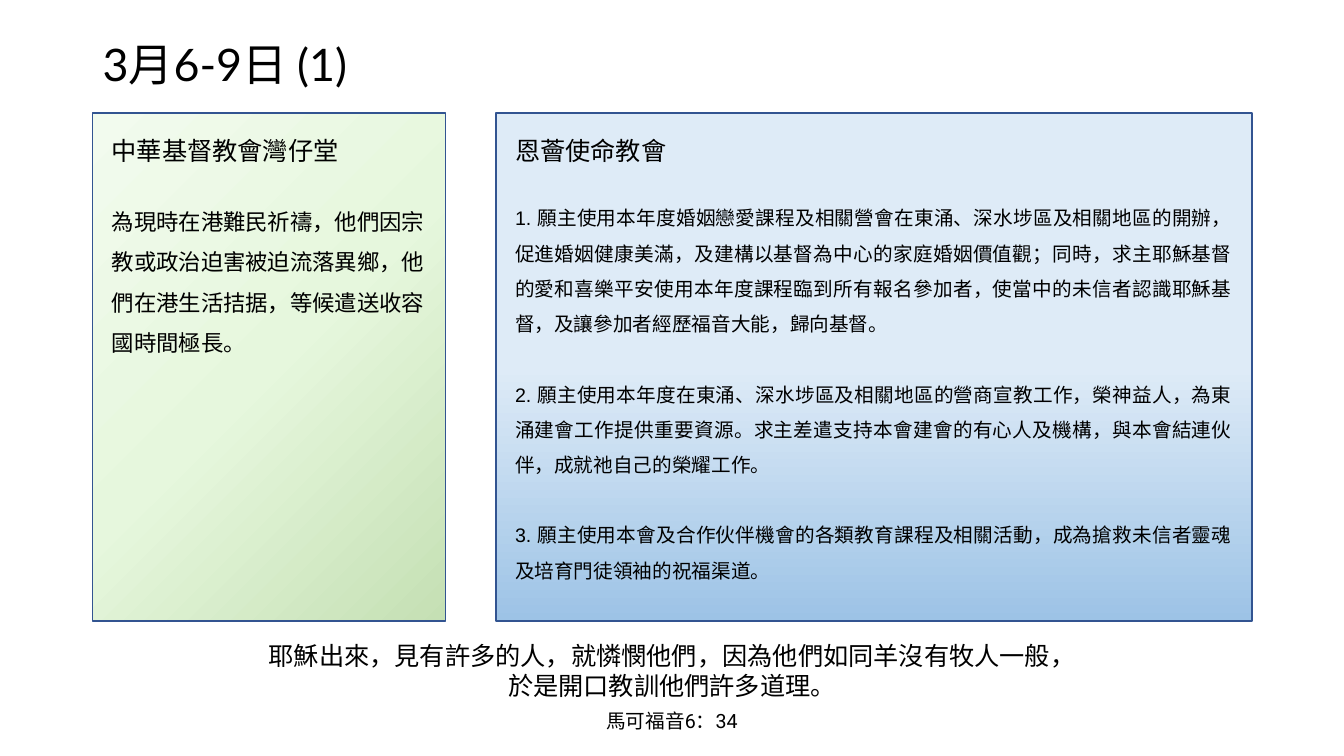
from lxml import etree
from pptx import Presentation
from pptx import util as u
from pptx.dml.color import RGBColor
from pptx.enum import shapes, text
from pptx.oxml.ns import qn

COLORS = {
    "ink": "000000",
    "edge": "325491",
    "green": ["C5E0B4", "E6F7DD", "F2FBEE"],
    "blue": ["9DC3E6", "DEEBF7", "DCEBF8"],
}
LEFT = text.PP_ALIGN.LEFT
CENTER = text.PP_ALIGN.CENTER
JUST = text.PP_ALIGN.JUSTIFY


class Page:
    def __init__(self, slide):
        self.slide = slide

    def panel(self, box, tint, angle):
        rect = self.slide.shapes.add_shape(
            shapes.MSO_SHAPE.RECTANGLE, *map(u.Inches, box))
        rect.shadow.inherit = False
        rect.line.color.rgb = RGBColor.from_string(COLORS["edge"])
        rect.line.width = u.Pt(1)
        rect.fill.gradient()
        grad = rect.fill._xPr.find(qn("a:gradFill"))
        for child in list(grad):
            grad.remove(child)
        stops = etree.SubElement(grad, qn("a:gsLst"))
        for i, shade in enumerate(COLORS[tint]):
            stop = etree.SubElement(stops, qn("a:gs"), pos=str(i * 50000))
            etree.SubElement(stop, qn("a:srgbClr"), val=shade)
        etree.SubElement(grad, qn("a:lin"), ang=str(angle * 60000), scaled="0")

    def words(self, box, font, paras, anchor=text.MSO_ANCHOR.TOP, grow=True):
        frame = self.slide.shapes.add_textbox(*map(u.Inches, box)).text_frame
        frame.word_wrap = True
        frame.vertical_anchor = anchor
        if grow:
            frame.auto_size = text.MSO_AUTO_SIZE.SHAPE_TO_FIT_TEXT
        for i, (line, size, align, pitch, gap) in enumerate(paras):
            para = frame.add_paragraph() if i else frame.paragraphs[0]
            para.text = line
            para.alignment = align
            para.line_spacing = pitch
            para.space_before = u.Pt(gap)
            for run in para.runs:
                run.font.name = font
                run.font.size = u.Pt(size)
                run.font.color.rgb = RGBColor.from_string(COLORS["ink"])


def main():
    deck = Presentation()
    deck.slide_width = u.Inches(13.33)
    deck.slide_height = u.Inches(7.5)
    page = Page(deck.slides.add_slide(deck.slide_layouts[6]))

    page.panel((0.92, 1.12, 3.5, 5.04), "green", 225)
    page.panel((4.92, 1.12, 7.5, 5.04), "blue", 270)

    page.words((0.92, 0.3, 6.56, 0.72), "Lato",
               [("3月6-9日 (1)", 32, LEFT, 0.9, 0)],
               text.MSO_ANCHOR.MIDDLE, False)

    page.words((1.01, 1.29, 3.31, 2.28), "Arial", [
        ("中華基督教會灣仔堂", 18, LEFT, 1, 0),
        ("為現時在港難民祈禱，他們因宗教或政治迫害被迫流落異鄉，"
         "他們在港生活拮据，等候遣送收容國時間極長。", 16, LEFT, 1.5, 21),
    ])

    prayers = [
        "1. 願主使用本年度婚姻戀愛課程及相關營會在東涌、深水埗區及相關地區的開辦，"
        "促進婚姻健康美滿，及建構以基督為中心的家庭婚姻價值觀；同時，"
        "求主耶穌基督的愛和喜樂平安使用本年度課程臨到所有報名參加者，"
        "使當中的未信者認識耶穌基督，及讓參加者經歷福音大能，歸向基督。",
        "2. 願主使用本年度在東涌、深水埗區及相關地區的營商宣教工作，榮神益人，"
        "為東涌建會工作提供重要資源。求主差遣支持本會建會的有心人及機構，"
        "與本會結連伙伴，成就祂自己的榮耀工作。",
        "3. 願主使用本會及合作伙伴機會的各類教育課程及相關活動，"
        "成為搶救未信者靈魂及培育門徒領袖的祝福渠道。",
    ]
    page.words((5.01, 1.29, 7.31, 5.4), "Arial",
               [("恩薈使命教會", 18, LEFT, 1, 0)]
               + [(line, 14, JUST, 1.5, 25 if i else 21)
                  for i, line in enumerate(prayers)])

    page.words((2.11, 6.29, 9.11, 1.03), "Roboto", [
        ("耶穌出來，見有許多的人，就憐憫他們，因為他們如同羊沒有牧人一般，\v"
         "於是開口教訓他們許多道理。", 18, CENTER, 1, 0),
        ("馬可福音6：34", 14, CENTER, 1, 6),
    ], text.MSO_ANCHOR.BOTTOM)

    deck.save("out.pptx")


if __name__ == "__main__":
    main()
